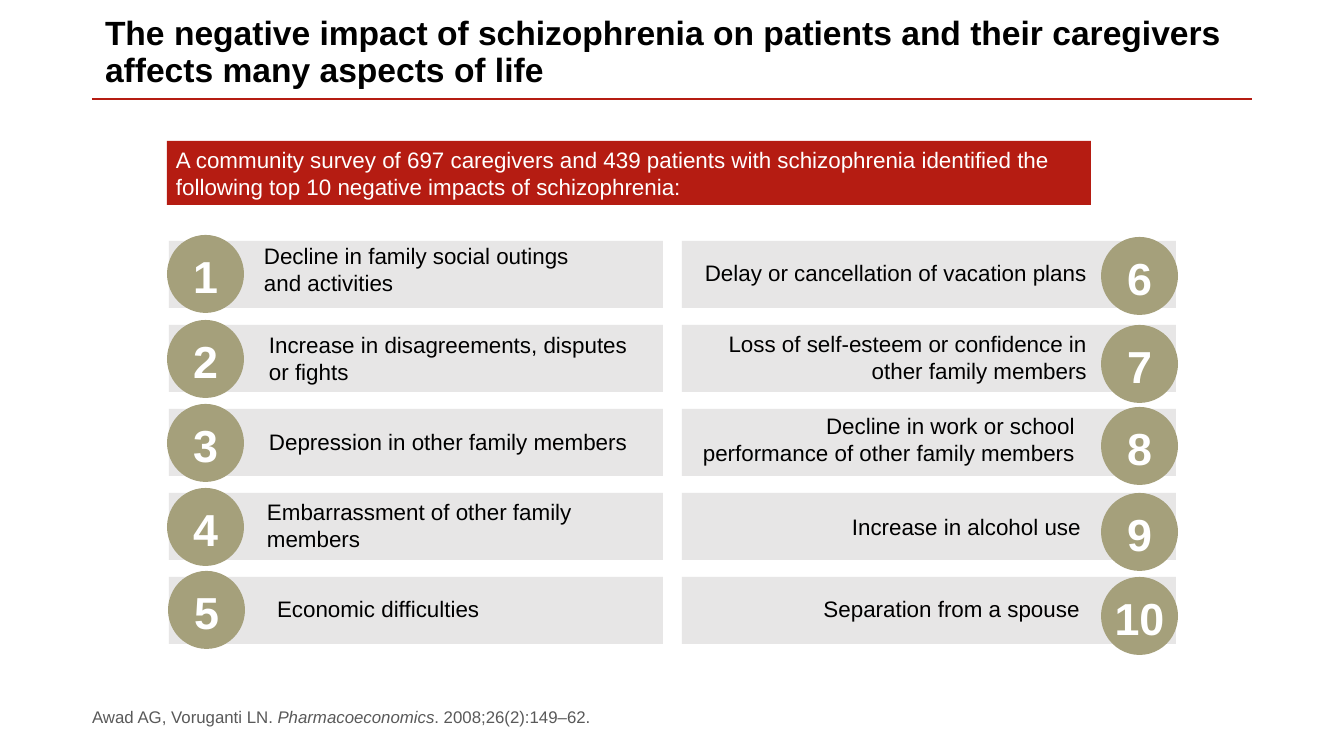
from lxml import etree
from pptx import Presentation
from pptx.dml.color import RGBColor
from pptx.enum.shapes import MSO_CONNECTOR, MSO_SHAPE
from pptx.enum.text import MSO_ANCHOR, PP_ALIGN
from pptx.oxml.ns import qn
from pptx.util import Emu, Pt

SCALE = 9144000 / 1344  # EMU in one px
THEME = {
    "font": "Arial",
    "red": RGBColor.from_string("B51C12"),
    "olive": RGBColor.from_string("A5A07B"),
    "gray": RGBColor.from_string("E7E6E6"),
    "muted": RGBColor.from_string("595959"),
    "black": RGBColor.from_string("000000"),
    "white": RGBColor.from_string("FFFFFF"),
    "title": Pt(18), "body": Pt(12), "number": Pt(24), "source": Pt(9),
}

presentation = Presentation()
presentation.slide_width = Emu(9144000)
presentation.slide_height = Emu(5143500)
slide = presentation.slides.add_slide(presentation.slide_layouts[6])


def add_box(kind, left, top, width, height, fill=None):
    """Add a borderless shape, or a text box when kind is None."""
    bounds = [Emu(round(value * SCALE)) for value in (left, top, width, height)]
    if kind is None:
        return slide.shapes.add_textbox(*bounds)
    shape = slide.shapes.add_shape(kind, *bounds)
    shape.shadow.inherit = False
    shape.fill.solid()
    shape.fill.fore_color.rgb = fill
    shape.line.fill.background()
    return shape


def write(shape, runs, size, color, insets=(9, 5, 9, 5), align=PP_ALIGN.LEFT,
          anchor=MSO_ANCHOR.TOP, bold=False):
    """Write (text, italic) runs into one paragraph and return it."""
    frame = shape.text_frame
    frame.word_wrap = True
    frame.vertical_anchor = anchor
    (frame.margin_left, frame.margin_top, frame.margin_right,
     frame.margin_bottom) = [Emu(round(inset * SCALE)) for inset in insets]
    paragraph = frame.paragraphs[0]
    paragraph.alignment = align
    for text, italic in runs:
        for index, line in enumerate(text.split("\n")):
            if index:
                paragraph.add_line_break()
            run = paragraph.add_run()
            run.text = line
            run.font.name = THEME["font"]
            run.font.size = size
            run.font.bold = bold
            run.font.italic = italic
            run.font.color.rgb = color
    return paragraph


# Title and rule
rule = slide.shapes.add_connector(
    MSO_CONNECTOR.STRAIGHT,
    *[Emu(round(value * SCALE)) for value in (92, 99, 1252, 99)])
rule.line.color.rgb = THEME["red"]
rule.line.width = Pt(1.5)
etree.SubElement(rule._element.spPr, qn("a:effectLst"))

title = write(
    add_box(None, 92, 12, 1160, 82),
    [("The negative impact of schizophrenia on patients and their caregivers "
      "affects many aspects of life", False)],
    THEME["title"], THEME["black"], insets=(13, 7, 13, 7),
    anchor=MSO_ANCHOR.MIDDLE, bold=True)
title.line_spacing = 0.9

# Source
source = write(
    add_box(None, 92, 708, 618, 19),
    [("Awad AG, Voruganti LN. ", False), ("Pharmacoeconomics", True),
     (". 2008;26(2):149–62.", False)],
    THEME["source"], THEME["muted"], insets=(0, 0, 0, 0),
    anchor=MSO_ANCHOR.BOTTOM)
source.line_spacing = Pt(10.5)

# Survey banner
write(add_box(MSO_SHAPE.RECTANGLE, 167, 141, 924, 64, THEME["red"]),
      [("A community survey of 697 caregivers and 439 patients with schizophrenia "
        "identified the following top 10 negative impacts of schizophrenia:", False)],
      THEME["body"], THEME["white"])

# Impacts: text, label (left, top, width, height), circle (left, top)
left_impacts = [
    ("Decline in family social outings\nand activities", (255, 237, 427, 64), (167, 235)),
    ("Increase in disagreements, disputes\nor fights", (260, 326, 418, 64), (167, 320)),
    ("Depression in other family members", (260, 423, 383, 38), (167, 404)),
    ("Embarrassment of other family members", (258, 493, 407, 64), (167, 488)),
    ("Economic difficulties", (268, 590, 224, 38), (168, 571)),
]
right_impacts = [
    ("Delay or cancellation of vacation plans", (690, 254, 406, 38), (1101, 237)),
    ("Loss of self-esteem or confidence in other family members",
     (685, 325, 411, 64), (1101, 325)),
    ("Decline in work or school\nperformance of other family members",
     (676, 407, 408, 64), (1101, 407)),
    ("Increase in alcohol use", (839, 508, 251, 38), (1101, 493)),
    ("Separation from a spouse", (809, 590, 280, 38), (1101, 577)),
]
columns = [
    (169, PP_ALIGN.LEFT, left_impacts),
    (682, PP_ALIGN.RIGHT, right_impacts),
]
ROW_TOP, ROW_PITCH = 241, 84

for column, (bar_left, align, impacts) in enumerate(columns):
    for row, (text, label, circle) in enumerate(impacts):
        add_box(MSO_SHAPE.RECTANGLE, bar_left, ROW_TOP + row * ROW_PITCH, 494, 67,
                THEME["gray"])
        write(add_box(None, *label), [(text, False)], THEME["body"], THEME["black"],
              align=align)
        number = column * len(impacts) + row + 1
        write(add_box(MSO_SHAPE.OVAL, *circle, 77, 78, THEME["olive"]),
              [(str(number), False)], THEME["number"], THEME["white"],
              insets=(0, 13, 0, 9), align=PP_ALIGN.CENTER,
              anchor=MSO_ANCHOR.MIDDLE, bold=True)

presentation.save("out.pptx")
